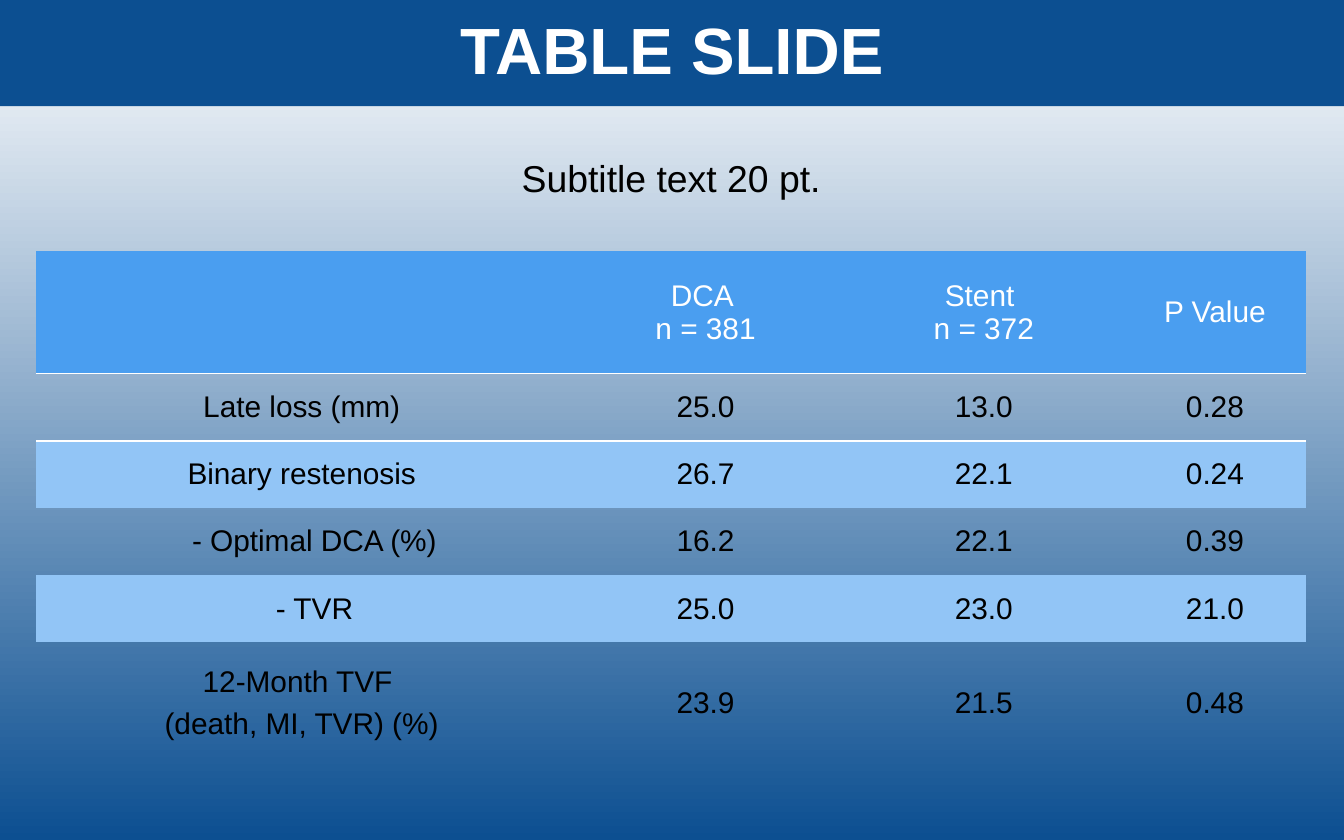
"""Build a title slide with a subtitle and a banded comparison table."""
from dataclasses import dataclass

from lxml import etree
from pptx import Presentation
from pptx.dml.color import RGBColor as RGB
from pptx.enum.text import MSO_ANCHOR as Anchor, PP_ALIGN as Align
from pptx.oxml import parse_xml
from pptx.oxml.ns import nsdecls
from pptx.util import Inches, Pt


@dataclass(frozen=True)
class Theme:
    font: str = "Arial"
    navy: str = "0C4F91"
    header: str = "4A9EF0"
    band: str = "92C5F6"
    white: str = "FFFFFF"
    black: str = "000000"
    title_size: int = 35
    subtitle_size: int = 20
    table_size: int = 16


theme = Theme()
NO_GRID_STYLE = "{2D5ABB26-0587-4C30-8999-92F81FD0307C}"


def write(tf, text, size, color=theme.black, bold=False, spacing=None, before=0):
    tf.word_wrap = True
    for i, line in enumerate(text.split("\n")):
        p = tf.paragraphs[0] if i == 0 else tf.add_paragraph()
        p.text = line
        p.alignment = Align.CENTER
        p.space_before = Pt(before)
        if spacing:
            p.line_spacing = spacing
        for r in p.runs:
            r.font.name = theme.font
            r.font.size = Pt(size)
            r.font.bold = bold
            r.font.color.rgb = RGB.from_string(color)


def add_border(cell, side):
    line = parse_xml(
        f'<a:{side} {nsdecls("a")} w="12700"><a:solidFill>'
        f'<a:srgbClr val="{theme.white}"/></a:solidFill></a:{side}>'
    )
    cell._tc.get_or_add_tcPr().insert(0, line)


prs = Presentation()
prs.slide_width, prs.slide_height = Inches(10), Inches(6.25)
s = prs.slides.add_slide(prs.slide_layouts[5])

bg = s.background.fill
bg.gradient()
bg.gradient_angle = 270
for stop, color in zip(bg.gradient_stops, (theme.white, theme.navy)):
    stop.color.rgb = RGB.from_string(color)

title = s.shapes.title
title.left, title.top = Inches(0), Inches(0)
title.width, title.height = Inches(10), Inches(0.79)
title.fill.solid()
title.fill.fore_color.rgb = RGB.from_string(theme.navy)
tf = title.text_frame
tf.vertical_anchor = Anchor.MIDDLE
tf.margin_left = tf.margin_right = tf.margin_top = tf.margin_bottom = Inches(0.05)
write(tf, "TABLE SLIDE", theme.title_size, color=theme.white, bold=True, spacing=0.9)

subtitle = s.shapes.add_textbox(Inches(0.27), Inches(1.15), Inches(9.45), Inches(0.39))
subtitle.text_frame.vertical_anchor = Anchor.MIDDLE
write(subtitle.text_frame, "Subtitle text 20 pt.", theme.subtitle_size, spacing=0.9, before=10)

rows = [
    ("", "DCA \vn = 381", "Stent \vn = 372", "P Value"),
    ("Late loss (mm)", "25.0", "13.0", "0.28"),
    ("Binary restenosis", "26.7", "22.1", "0.24"),
    ("- Optimal DCA (%)", "16.2", "22.1", "0.39"),
    ("- TVR", "25.0", "23.0", "21.0"),
    ("12-Month TVF \n(death, MI, TVR) (%)", "23.9", "21.5", "0.48"),
]
col_widths = (3.95, 2.06, 2.08, 1.36)
row_heights = (0.91, 0.5, 0.5, 0.5, 0.5, 0.91)

table = s.shapes.add_table(
    len(rows), len(col_widths), Inches(0.27), Inches(1.87), Inches(9.45), Inches(3.82)
).table
table.horz_banding = False
table._tbl.tblPr[0].text = NO_GRID_STYLE
for col, width in zip(table.columns, col_widths):
    col.width = Inches(width)

for i, (row, height) in enumerate(zip(rows, row_heights)):
    table.rows[i].height = Inches(height)
    fill = theme.header if i == 0 else theme.band if i % 2 == 0 else None
    for j, text in enumerate(row):
        cell = table.cell(i, j)
        cell.vertical_anchor = Anchor.MIDDLE
        if text.startswith("- "):
            cell.margin_left = Inches(0.29)
        if fill:
            cell.fill.solid()
            cell.fill.fore_color.rgb = RGB.from_string(fill)
        else:
            cell.fill.background()
        if i < 2:
            add_border(cell, "lnT" if i else "lnB")
        write(cell.text_frame, text, theme.table_size,
              color=theme.black if i else theme.white, before=4.8)

prs.save("out.pptx")
